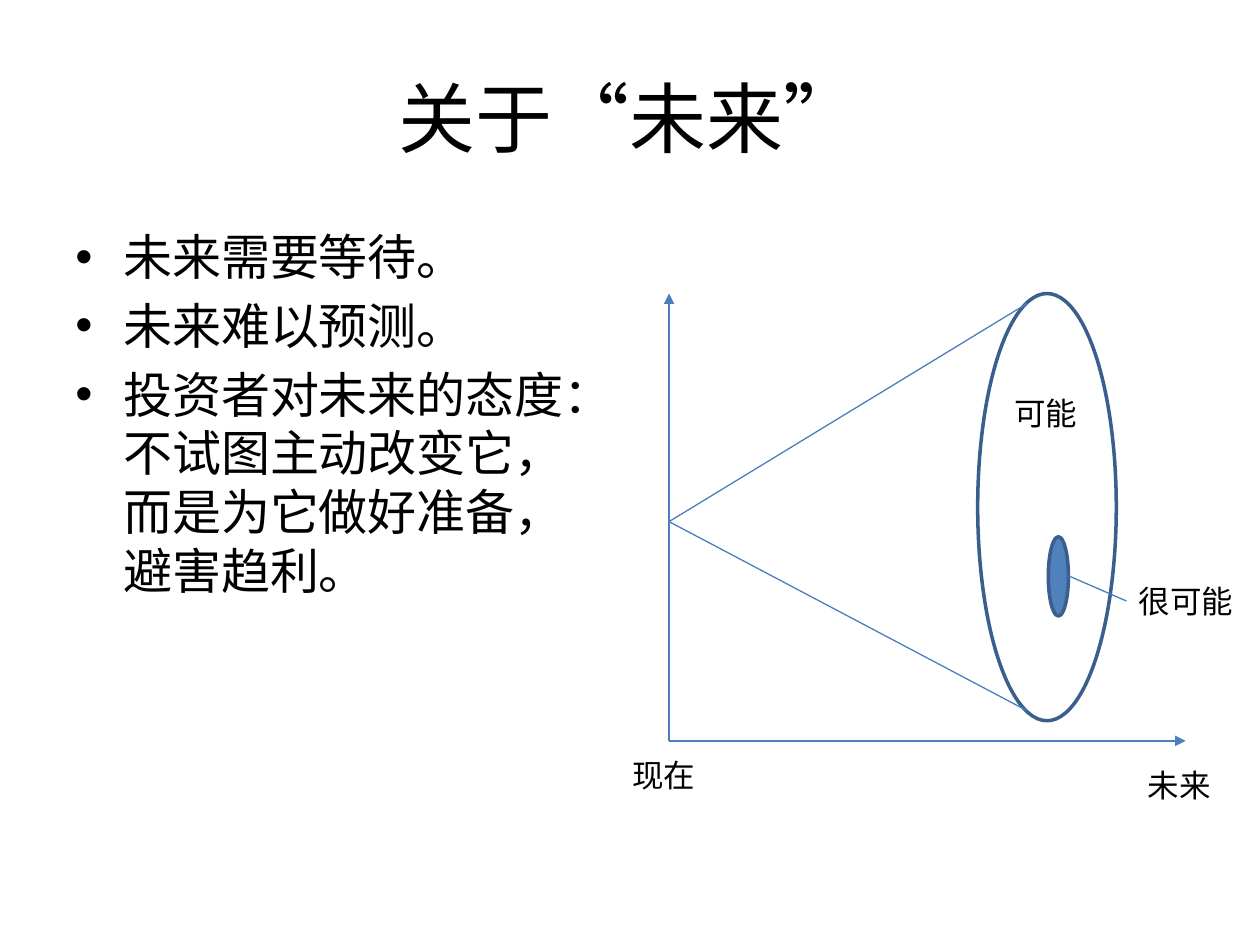
import pptx
import pptx.util
import pptx.dml.color
import pptx.enum.dml
import pptx.enum.lang
import pptx.enum.shapes
import pptx.enum.text
import pptx.oxml
import pptx.oxml.ns
from pptx.util import Inches

FONT = "Calibri"
BLACK, WHITE = "000000", "FFFFFF"
LINE, OUTLINE, BLUE = "4B7EBC", "3A5F8C", "4F81BD"


def rgb(value):
    return pptx.dml.color.RGBColor.from_string(value)


def add_xml(parent, tag, **attrs):
    el = pptx.oxml.parse_xml(f"<a:{tag} {pptx.oxml.ns.nsdecls('a')}/>")
    for name, value in attrs.items():
        el.set(name, value)
    parent.append(el)


def add_run(p, text, size):
    r = p.add_run()
    r.text = text
    r.font.name = FONT
    r.font.size = pptx.util.Pt(size)
    r.font.color.rgb = rgb(BLACK)
    r.font.language_id = pptx.enum.lang.MSO_LANGUAGE_ID.SIMPLIFIED_CHINESE


def set_title(slide, text):
    sp = slide.shapes.title
    sp.left, sp.top = Inches(0.5), Inches(0.3)
    sp.width, sp.height = Inches(9), Inches(1.25)
    tf = sp.text_frame
    tf.vertical_anchor = pptx.enum.text.MSO_ANCHOR.MIDDLE
    p = tf.paragraphs[0]
    p.alignment = pptx.enum.text.PP_ALIGN.CENTER
    add_run(p, text, 44)


def add_bullets(slide, left, top, width, height, items, size=28):
    sp = slide.shapes.add_textbox(Inches(left), Inches(top), Inches(width), Inches(height))
    tf = sp.text_frame
    tf.word_wrap = True
    for i, text in enumerate(items):
        p = tf.add_paragraph() if i else tf.paragraphs[0]
        pPr = p._p.get_or_add_pPr()
        pPr.set("marL", str(Inches(0.38)))
        pPr.set("indent", str(-Inches(0.38)))
        add_xml(pPr, "buFont", typeface="Arial")
        add_xml(pPr, "buChar", char="•")
        p.space_before = pptx.util.Pt(0.2 * size if i else 0)
        add_run(p, text, size)


def add_label(slide, left, top, width, text):
    sp = slide.shapes.add_textbox(Inches(left), Inches(top), Inches(width), Inches(0.4))
    tf = sp.text_frame
    tf.word_wrap = True
    add_run(tf.paragraphs[0], text, 18)


def add_line(slide, start, end, arrow=False):
    cxn = slide.shapes.add_connector(
        pptx.enum.shapes.MSO_CONNECTOR.STRAIGHT, *(Inches(v) for v in start + end))
    cxn.line.color.rgb = rgb(LINE)
    cxn.line.width = pptx.util.Pt(0.75)
    if arrow:
        add_xml(cxn.line._get_or_add_ln(), "tailEnd", type="triangle")
    add_xml(cxn._element.spPr, "effectLst")


def add_ellipse(slide, left, top, width, height, fill):
    sp = slide.shapes.add_shape(
        pptx.enum.shapes.MSO_SHAPE.OVAL,
        Inches(left), Inches(top), Inches(width), Inches(height))
    sp.shadow.inherit = False
    sp.fill.solid()
    sp.fill.fore_color.rgb = rgb(fill)
    sp.line.color.rgb = rgb(OUTLINE)
    sp.line.width = pptx.util.Pt(2)


def main():
    prs = pptx.Presentation()
    prs.slide_width, prs.slide_height = Inches(10), Inches(7.5)
    slide = prs.slides.add_slide(prs.slide_layouts[5])

    set_title(slide, "关于“未来”")
    add_bullets(slide, 0.5, 1.75, 4.42, 4.95, [
        "未来需要等待。",
        "未来难以预测。",
        "投资者对未来的态度：不试图主动改变它，而是为它做好准备，避害趋利。",
    ])

    # Axes
    origin = (5.31, 5.88)
    for tip in ((9.41, 5.88), (5.31, 2.33)):
        add_line(slide, origin, tip, arrow=True)

    # Cone of possible futures
    add_ellipse(slide, 7.76, 2.33, 1.1, 3.39, WHITE)
    for edge in ((8.15, 2.41), (8.15, 5.64)):
        add_line(slide, (5.31, 4.14), edge)

    # Likely future and its leader line
    add_ellipse(slide, 8.32, 4.26, 0.16, 0.63, BLUE)
    add_line(slide, (8.48, 4.57), (8.94, 4.77))

    # Labels
    for left, top, width, text in (
        (8.94, 4.57, 1.06, "很可能"),
        (7.95, 3.08, 1.06, "可能"),
        (9.01, 6.03, 1.06, "未来"),
        (4.92, 5.95, 0.79, "现在"),
    ):
        add_label(slide, left, top, width, text)

    prs.save("out.pptx")


if __name__ == "__main__":
    main()
